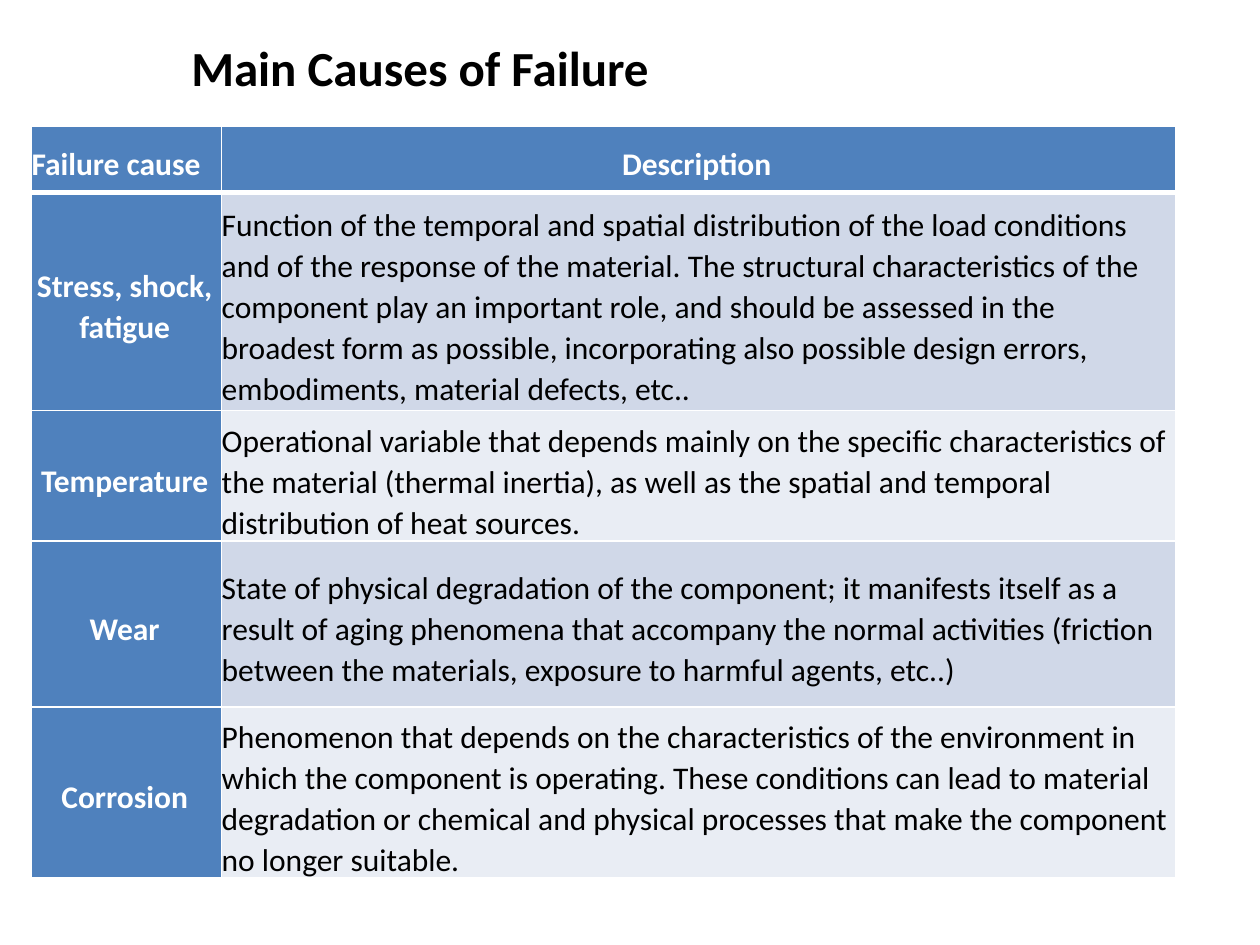
from lxml import etree
from pptx import Presentation
from pptx.dml.color import RGBColor
from pptx.enum.text import MSO_ANCHOR, PP_ALIGN
from pptx.oxml.ns import qn
from pptx.util import Inches, Pt

LEFT, CENTER = PP_ALIGN.LEFT, PP_ALIGN.CENTER
MIDDLE = MSO_ANCHOR.MIDDLE
FONT = "Calibri"
BLUE, WHITE, BLACK = "4F81BD", "FFFFFF", "000000"
BANDS = ("D0D8E8", "E9EDF4")

TITLE = "Main Causes of Failure"
HEADER = ("Failure cause", "Description")
CAUSES = [
    ("Stress, shock, fatigue",
     "Function of the temporal and spatial distribution of the load conditions and of the "
     "response of the material. The structural characteristics of the component play an "
     "important role, and should be assessed in the broadest form as possible, incorporating "
     "also possible design errors, embodiments, material defects, etc.."),
    ("Temperature",
     "Operational variable that depends mainly on the specific characteristics of the material "
     "(thermal inertia), as well as the spatial and temporal distribution of heat sources."),
    ("Wear",
     "State of physical degradation of the component; it manifests itself as a result of aging "
     "phenomena that accompany the normal activities (friction between the materials, exposure "
     "to harmful agents, etc..)"),
    ("Corrosion",
     "Phenomenon that depends on the characteristics of the environment in which the component "
     "is operating. These conditions can lead to material degradation or chemical and physical "
     "processes that make the component no longer suitable."),
]
COLUMN_WIDTHS = (1.51, 7.57)
ROW_HEIGHTS = (0.53, 1.73, 0.92, 1.32, 1.33)


def rgb(color):
    return RGBColor.from_string(color)


def style_paragraph(paragraph, size, color, bold):
    font = paragraph.font
    font.name, font.size, font.bold = FONT, Pt(size), bold
    font.color.rgb = rgb(color)


def set_borders(cell, widths):
    """Draw white left, right, top and bottom borders, widths in points."""
    properties = cell._tc.get_or_add_tcPr()
    for index, (side, width) in enumerate(zip(("lnL", "lnR", "lnT", "lnB"), widths)):
        line = etree.Element(qn(f"a:{side}"), w=str(Pt(width)))
        fill = etree.SubElement(line, qn("a:solidFill"))
        etree.SubElement(fill, qn("a:srgbClr"), val=WHITE)
        properties.insert(index, line)


def fill_cell(cell, text, fill, color, bold, align, borders):
    cell.fill.solid()
    cell.fill.fore_color.rgb = rgb(fill)
    cell.vertical_anchor = MIDDLE
    cell.margin_left = cell.margin_bottom = 0
    cell.margin_top, cell.margin_right = Inches(0.07), Inches(0.03)
    cell.text = text
    paragraph = cell.text_frame.paragraphs[0]
    paragraph.alignment = align
    paragraph.line_spacing = 1.07
    style_paragraph(paragraph, 18, color, bold)
    set_borders(cell, borders)


def add_title(slide):
    box = slide.shapes.add_textbox(Inches(1.42), Inches(0.25), Inches(4.17), Inches(0.57))
    box.text_frame.word_wrap = True
    paragraph = box.text_frame.paragraphs[0]
    paragraph.text = TITLE
    style_paragraph(paragraph, 28, BLACK, True)


def add_causes_table(slide):
    rows = [HEADER, *CAUSES]
    table = slide.shapes.add_table(
        len(rows), len(HEADER), Inches(0.25), Inches(1),
        Inches(sum(COLUMN_WIDTHS)), Inches(sum(ROW_HEIGHTS))).table
    for column, width in zip(table.columns, COLUMN_WIDTHS):
        column.width = Inches(width)
    for row, height in zip(table.rows, ROW_HEIGHTS):
        row.height = Inches(height)

    for r, row in enumerate(rows):
        borders = (1, 1, 3 if r == 1 else 1, 3 if r == 0 else 1)
        for c, text in enumerate(row):
            is_heading = r == 0 or c == 0
            fill = BLUE if is_heading else BANDS[(r - 1) % 2]
            color = WHITE if is_heading else BLACK
            align = CENTER if (r == 0) != (c == 0) else LEFT
            fill_cell(table.cell(r, c), text, fill, color, is_heading, align, borders)


def main():
    deck = Presentation()
    deck.slide_width, deck.slide_height = Inches(10), Inches(7.5)
    slide = deck.slides.add_slide(deck.slide_layouts[6])
    add_title(slide)
    add_causes_table(slide)
    deck.save("out.pptx")


if __name__ == "__main__":
    main()
